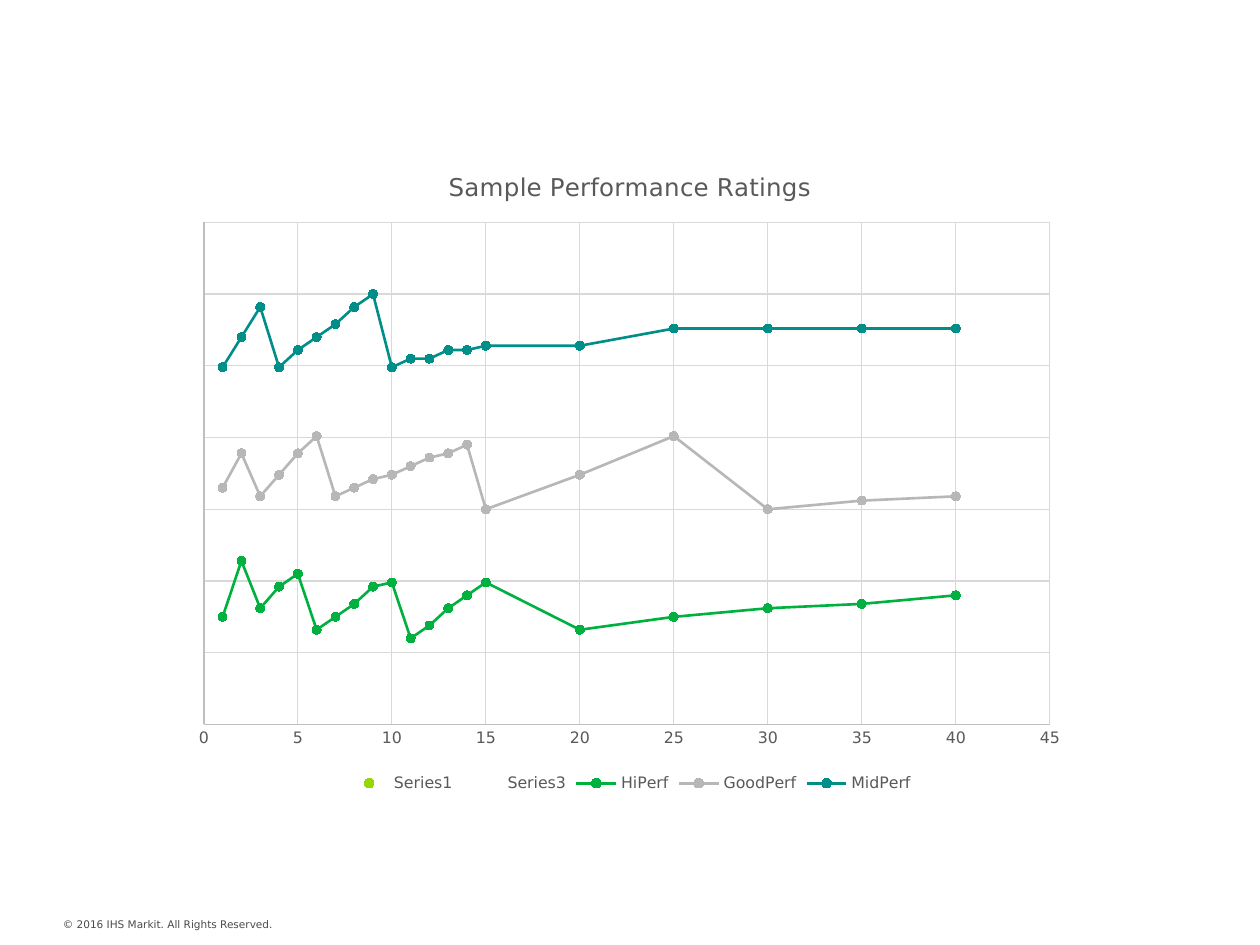
from lxml import etree
from pptx import Presentation
from pptx.chart.data import XyChartData
from pptx.dml.color import RGBColor
from pptx.enum.chart import XL_CHART_TYPE as ChartType
from pptx.enum.chart import XL_LEGEND_POSITION as LegendPosition
from pptx.enum.chart import XL_MARKER_STYLE as MarkerStyle
from pptx.enum.chart import XL_TICK_LABEL_POSITION as LabelPosition
from pptx.enum.chart import XL_TICK_MARK as TickMark
from pptx.oxml.ns import qn
from pptx.util import Inches, Pt

COLORS = {
    "title": "595959", "footer": "4B4B4B", "axis": "BFBFBF", "grid": "D9D9D9",
    "Series1": "97D700", "HiPerf": "00B140",
    "GoodPerf": "B8B7B8", "MidPerf": "008E89",
}
FONT = "DejaVu Sans"

# Ratings are measured at these x positions
STEPS = [*range(1, 16), *range(20, 41, 5)]
RATINGS = {
    "HiPerf": [25, 38, 27, 32, 35, 22, 25, 28, 32, 33,
               20, 23, 27, 30, 33, 22, 25, 27, 28, 30],
    "GoodPerf": [55, 63, 53, 58, 63, 67, 53, 55, 57, 58,
                 60, 62, 63, 65, 50, 58, 67, 50, 52, 53],
    "MidPerf": [83, 90, 97, 83, 87, 90, 93, 97, 100, 83,
                85, 85, 87, 87, 88, 88, 92, 92, 92, 92],
}
# Helper series appear in the legend, their points stay unmarked
HELPERS = {"Series1": [17, 33, 50, 67, 83, 100], "Series3": [25, 58, 92]}
BAND = 16.67


class SlideBuilder:
    def __init__(self, slide):
        self.slide = slide

    def style_font(self, font, size, color):
        font.name, font.size, font.bold = FONT, Pt(size), False
        font.color.rgb = RGBColor.from_string(COLORS[color])

    def style_line(self, line, color, width=0.75):
        line.color.rgb = RGBColor.from_string(COLORS[color])
        line.width = Pt(width)

    def text(self, content, left, top, width, height, size, color):
        box = self.slide.shapes.add_textbox(
            Inches(left), Inches(top), Inches(width), Inches(height))
        frame = box.text_frame
        frame.word_wrap = False
        frame.text = content
        self.style_font(frame.paragraphs[0].runs[0].font, size, color)

    def scatter(self, title, left, top, width, height):
        data = XyChartData()
        for name, values in {**HELPERS, **RATINGS}.items():
            series = data.add_series(name)
            steps = STEPS if name in RATINGS else [40] * len(values)
            for x, y in zip(steps, values):
                series.add_data_point(x, y)
        chart = self.slide.shapes.add_chart(
            ChartType.XY_SCATTER_LINES, Inches(left), Inches(top),
            Inches(width), Inches(height), data).chart
        self.style_font(chart.font, 9, "title")

        # Title and legend
        chart.has_title = True
        heading = chart.chart_title.text_frame
        heading.text = title
        self.style_font(heading.paragraphs[0].runs[0].font, 14, "title")
        chart.has_legend = True
        chart.legend.position = LegendPosition.BOTTOM
        chart.legend.include_in_layout = False
        self.style_font(chart.legend.font, 9, "title")

        # Axes
        self.axis(chart.category_axis, 45, 5)
        self.axis(chart.value_axis, 7 * BAND, BAND)
        chart.value_axis.tick_label_position = LabelPosition.NONE

        # Series
        chart.plots[0].vary_by_categories = False
        for series in chart.plots[0].series:
            self.series(series)
        return chart

    def axis(self, axis, maximum, unit):
        axis.minimum_scale, axis.maximum_scale = 0, maximum
        axis.major_unit = unit
        axis.major_tick_mark = axis.minor_tick_mark = TickMark.NONE
        axis.has_major_gridlines = True
        self.style_line(axis.major_gridlines.format.line, "grid")
        self.style_line(axis.format.line, "axis")
        self.style_font(axis.tick_labels.font, 9, "title")

    def series(self, series):
        series.smooth = False
        marker = series.marker
        if series.name in COLORS:
            marker.style, marker.size = MarkerStyle.CIRCLE, 5
            marker.format.fill.solid()
            marker.format.fill.fore_color.rgb = RGBColor.from_string(
                COLORS[series.name])
            self.style_line(marker.format.line, series.name)
        else:
            marker.style = MarkerStyle.NONE
        if series.name in RATINGS:
            self.style_line(series.format.line, series.name, 1.5)
            return
        series.format.line.fill.background()
        for index in range(len(HELPERS[series.name])):
            point = series.points[index]
            point.marker.style = MarkerStyle.NONE
            point.format.line.fill.background()

    def place_plot(self, chart, **area):
        plot_area = chart.plots[0]._element.getparent()
        for old in plot_area.findall(qn("c:layout")):
            plot_area.remove(old)
        layout = etree.Element(qn("c:layout"))
        manual = etree.SubElement(layout, qn("c:manualLayout"))
        settings = {"layoutTarget": "inner", "xMode": "edge",
                    "yMode": "edge", **area}
        for tag, value in settings.items():
            etree.SubElement(manual, qn(f"c:{tag}")).set("val", str(value))
        plot_area.insert(0, layout)


def main():
    deck = Presentation()
    deck.slide_width, deck.slide_height = Inches(10), Inches(7.5)
    builder = SlideBuilder(deck.slides.add_slide(deck.slide_layouts[6]))

    # Footer
    builder.text("© 2016 IHS Markit. All Rights Reserved.",
                 0.4, 7.24, 1.92, 0.2, 6, "footer")

    # Ratings chart
    chart = builder.scatter("Sample Performance Ratings", 1.44, 1.16, 7.12, 5.17)
    builder.place_plot(chart, x=0.025, y=0.117, w=0.943, h=0.771)

    deck.save("out.pptx")


if __name__ == "__main__":
    main()
